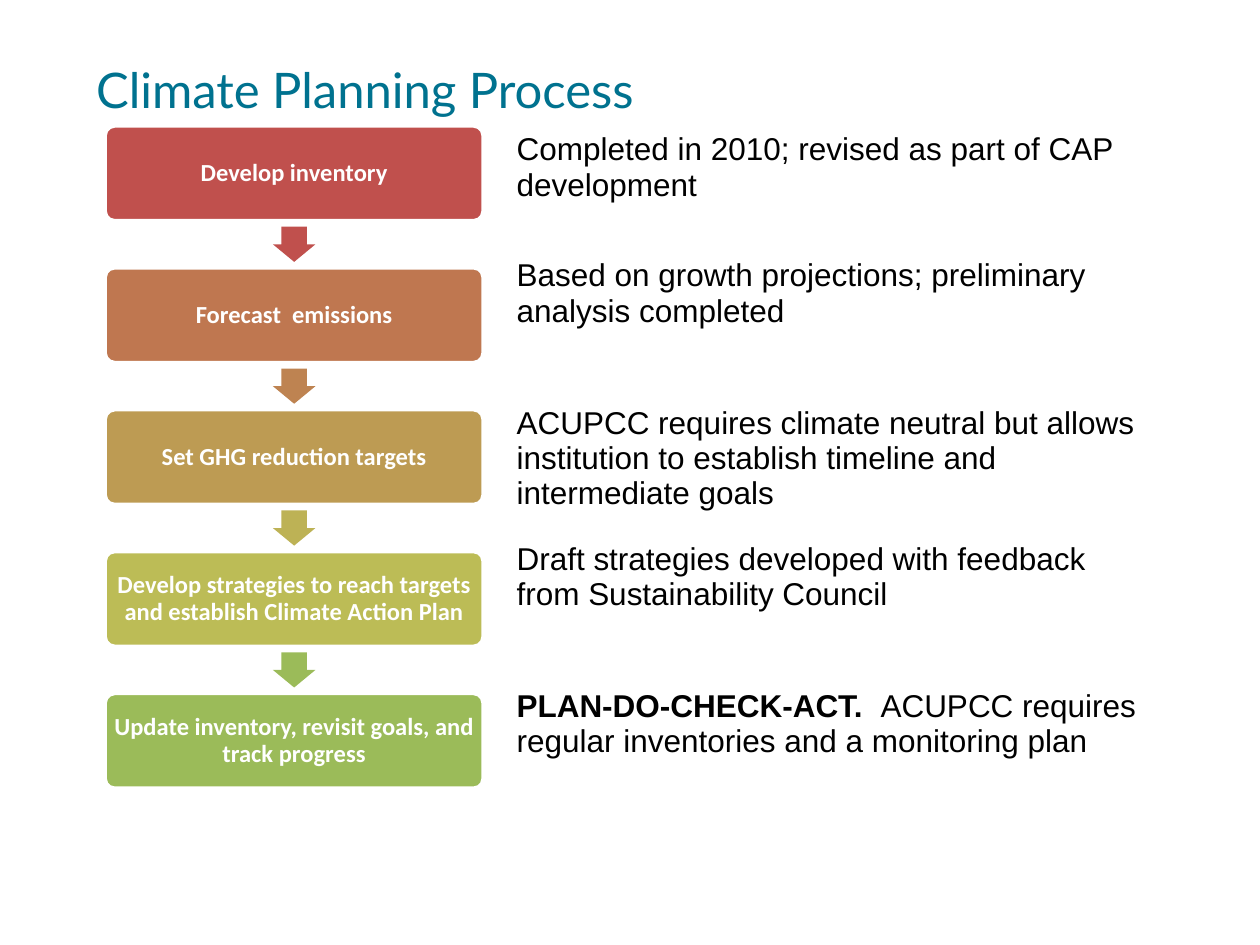
"""Build the climate planning process slide: a five-step flow with a note for each step."""
from pptx import Presentation
from pptx import util as u
from pptx.dml.color import RGBColor
from pptx.enum import shapes, text

COLORS = {"title": "00728F", "note": "000000", "white": "FFFFFF"}
STEPS = [
    ("Develop inventory", "C0504D"),
    ("Forecast  emissions", "BF7750"),
    ("Set GHG reduction targets", "BD9B53"),
    ("Develop strategies to reach targets and establish Climate Action Plan", "BCBC56"),
    ("Update inventory, revisit goals, and track progress", "9BBB59"),
]
ARROW_COLORS = ["C0504D", "BE8351", "BDB255", "9BBB59"]
NOTES = [
    (2.54, [("Completed in 2010; revised as part of CAP development", False)]),
    (2.97, [("Based on growth projections; preliminary analysis completed", False)]),
    (2.74, [("ACUPCC requires climate neutral but allows institution to establish "
             "timeline and intermediate goals", False)]),
    (2.97, [("Draft strategies developed with feedback from Sustainability Council", False)]),
    (2.59, [("PLAN-DO-CHECK-ACT.  ", True),
            ("ACUPCC requires regular inventories and a monitoring plan", False)]),
]
FLOW_LEFT, FLOW_TOP, FLOW_PITCH = 2.12, 2.54, 2.86
STEP_WIDTH, STEP_HEIGHT = 7.62, 1.91
ARROW_LENGTH, ARROW_BREADTH = 0.71, 0.86


def set_font(font, name, size, color):
    font.name, font.size = name, u.Pt(size)
    font.color.rgb = RGBColor.from_string(color)


def add_title(slide, wording):
    title = slide.shapes.add_textbox(u.Cm(1.69), u.Cm(1.27), u.Cm(22.44), u.Cm(1.69))
    title.text_frame.word_wrap = True
    heading = title.text_frame.paragraphs[0]
    heading.text = wording
    heading.line_spacing = u.Pt(28)
    set_font(heading.font, "Lato", 28, COLORS["title"])


def add_filled(slide, kind, left, top, width, height, color):
    filled = slide.shapes.add_shape(kind, u.Cm(left), u.Cm(top), u.Cm(width), u.Cm(height))
    filled.shadow.inherit = False
    filled.fill.solid()
    filled.fill.fore_color.rgb = RGBColor.from_string(color)
    return filled


def add_step(slide, top, wording, color):
    step = add_filled(slide, shapes.MSO_SHAPE.ROUNDED_RECTANGLE,
                      FLOW_LEFT, top, STEP_WIDTH, STEP_HEIGHT, color)
    step.adjustments[0] = 0.1
    step.line.color.rgb = RGBColor.from_string(COLORS["white"])
    step.line.width = u.Pt(2)
    frame = step.text_frame
    frame.word_wrap = True
    frame.vertical_anchor = text.MSO_ANCHOR.MIDDLE
    frame.margin_left = frame.margin_right = u.Cm(0.1)
    frame.margin_top = frame.margin_bottom = u.Cm(0.1)
    label = frame.paragraphs[0]
    label.text = wording
    label.alignment = text.PP_ALIGN.CENTER
    label.line_spacing = 0.9
    label.font.bold = True
    set_font(label.font, "Calibri", 14, COLORS["white"])


def add_step_arrow(slide, step_top, color):
    center_x = FLOW_LEFT + STEP_WIDTH / 2
    center_y = step_top + (STEP_HEIGHT + FLOW_PITCH) / 2
    arrow = add_filled(slide, shapes.MSO_SHAPE.RIGHT_ARROW, center_x - ARROW_LENGTH / 2,
                       center_y - ARROW_BREADTH / 2, ARROW_LENGTH, ARROW_BREADTH, color)
    arrow.rotation = 90
    arrow.adjustments[0], arrow.adjustments[1] = 0.6, 0.5
    arrow.line.fill.background()


def add_notes_table(slide):
    total = sum(height for height, _ in NOTES)
    notes = slide.shapes.add_table(len(NOTES), 1, u.Cm(10.16), u.Cm(FLOW_TOP),
                                   u.Cm(13.12), u.Cm(total)).table
    notes.first_row = notes.horz_banding = False
    for index, (height, parts) in enumerate(NOTES):
        notes.rows[index].height = u.Cm(height)
        cell = notes.cell(index, 0)
        cell.fill.background()
        note = cell.text_frame.paragraphs[0]
        set_font(note.font, "Arial", 18, COLORS["note"])
        for wording, bold in parts:
            run = note.add_run()
            run.text = wording
            run.font.bold = bold
            set_font(run.font, "Arial", 18, COLORS["note"])


def main():
    deck = Presentation()
    deck.slide_width, deck.slide_height = u.Cm(25.4), u.Cm(19.05)
    slide = deck.slides.add_slide(deck.slide_layouts[6])
    add_title(slide, "Climate Planning Process")
    for index, (wording, color) in enumerate(STEPS):
        add_step(slide, FLOW_TOP + index * FLOW_PITCH, wording, color)
    for index, color in enumerate(ARROW_COLORS):
        add_step_arrow(slide, FLOW_TOP + index * FLOW_PITCH, color)
    add_notes_table(slide)
    deck.save("out.pptx")


if __name__ == "__main__":
    main()
